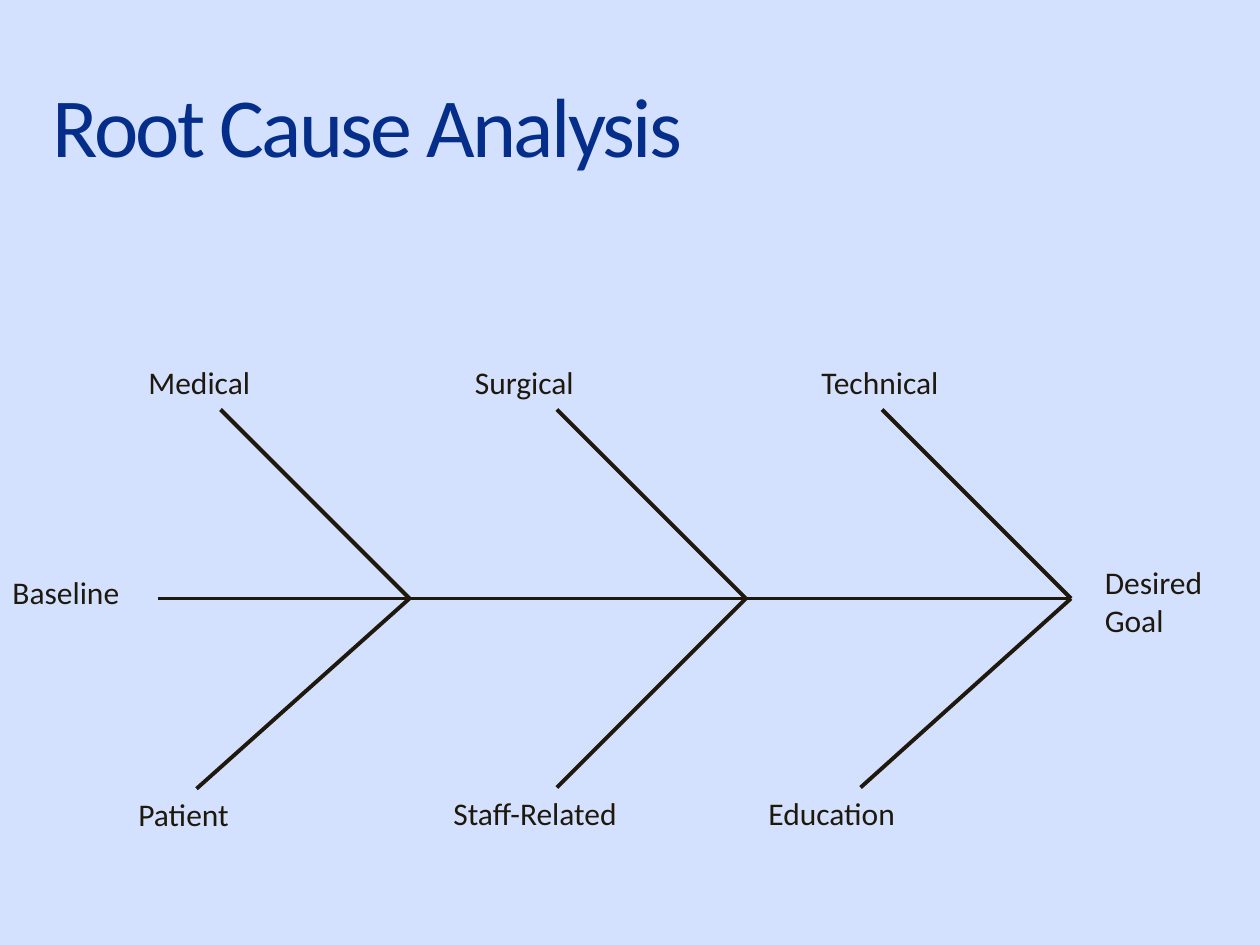
from pptx import Presentation
from pptx.dml.color import RGBColor
from pptx.enum.shapes import MSO_CONNECTOR as Connector
from pptx.enum.text import MSO_ANCHOR as Anchor, MSO_AUTO_SIZE as AutoSize, PP_ALIGN as Align
from pptx.oxml.ns import qn
from pptx.util import Inches, Pt
from lxml import etree

BACKGROUND = RGBColor(0xD4, 0xE1, 0xFE)
NAVY = RGBColor(0x05, 0x2E, 0x8B)
INK = RGBColor(0x1E, 0x18, 0x0D)
FONT = "Calibri"

SPINE_Y = 4.75
SPINE_START, SPINE_END = 1.25, 8.5
LABEL_HEIGHT = 0.4
UPPER_LABEL_TOP = 2.83

# Cause, joint on the spine, outer end (x, y), label left, label width
CAUSES = [
    ("Surgical", 5.92, 4.42, 3.25, 3.67, 2.08),
    ("Medical", 3.25, 1.75, 3.25, 1.08, 1.5),
    ("Education", 8.5, 6.83, 6.25, 6, 1.85),
    ("Staff-Related", 5.92, 4.42, 6.25, 3.5, 2.17),
    ("Patient", 3.25, 1.56, 6.26, 1, 1.31),
    ("Technical", 8.5, 7, 3.25, 6.42, 1.75),
]


def style_font(font, size, color):
    font.name = FONT
    font.size = Pt(size)
    font.color.rgb = color


def add_title(slide, text):
    title = slide.shapes.title
    title.left, title.top = Inches(0.42), Inches(0.67)
    title.width, title.height = Inches(9.17), Inches(0.73)
    frame = title.text_frame
    frame.margin_left = frame.margin_right = 0
    frame.margin_top = frame.margin_bottom = 0
    frame.vertical_anchor = Anchor.MIDDLE
    frame.auto_size = AutoSize.SHAPE_TO_FIT_TEXT
    para = frame.paragraphs[0]
    para.alignment = Align.LEFT
    para.line_spacing = 0.9
    span = para.add_run()
    span.text = text
    style_font(span.font, 48, NAVY)
    span._r.get_or_add_rPr().set("spc", "-150")  # tighter letter spacing


def add_line(shapes, start, end):
    points = [Inches(value) for value in (*start, *end)]
    line = shapes.add_connector(Connector.STRAIGHT, *points)
    line.line.color.rgb = INK
    line.line.width = Pt(2.25)
    etree.SubElement(line._element.spPr, qn("a:effectLst"))  # no shadow


def add_label(shapes, text, left, top, width, height=LABEL_HEIGHT):
    box = shapes.add_textbox(Inches(left), Inches(top), Inches(width), Inches(height))
    frame = box.text_frame
    frame.word_wrap = True
    frame.auto_size = AutoSize.SHAPE_TO_FIT_TEXT
    para = frame.paragraphs[0]
    para.text = text
    style_font(para.font, 18, INK)


def add_cause(slide, text, joint_x, end_x, end_y, label_left, label_width):
    """Group a slanted bone with the label at its outer end."""
    group = slide.shapes.add_group_shape()
    add_line(group.shapes, (joint_x, SPINE_Y), (end_x, end_y))
    label_top = UPPER_LABEL_TOP if end_y < SPINE_Y else end_y
    add_label(group.shapes, text, label_left, label_top, label_width)


def main():
    deck = Presentation()
    deck.slide_width, deck.slide_height = Inches(10), Inches(7.5)
    slide = deck.slides.add_slide(deck.slide_layouts[5])
    slide.background.fill.solid()
    slide.background.fill.fore_color.rgb = BACKGROUND

    add_title(slide, "Root Cause Analysis")

    # Fishbone: spine first, then the causes
    add_line(slide.shapes, (SPINE_START, SPINE_Y), (SPINE_END, SPINE_Y))
    for cause in CAUSES:
        add_cause(slide, *cause)

    # Ends of the spine
    add_label(slide.shapes, "Desired Goal", 8.67, 4.42, 1.17, 0.71)
    add_label(slide.shapes, "Baseline", 0, 4.5, 1.25)

    deck.save("out.pptx")


if __name__ == "__main__":
    main()
